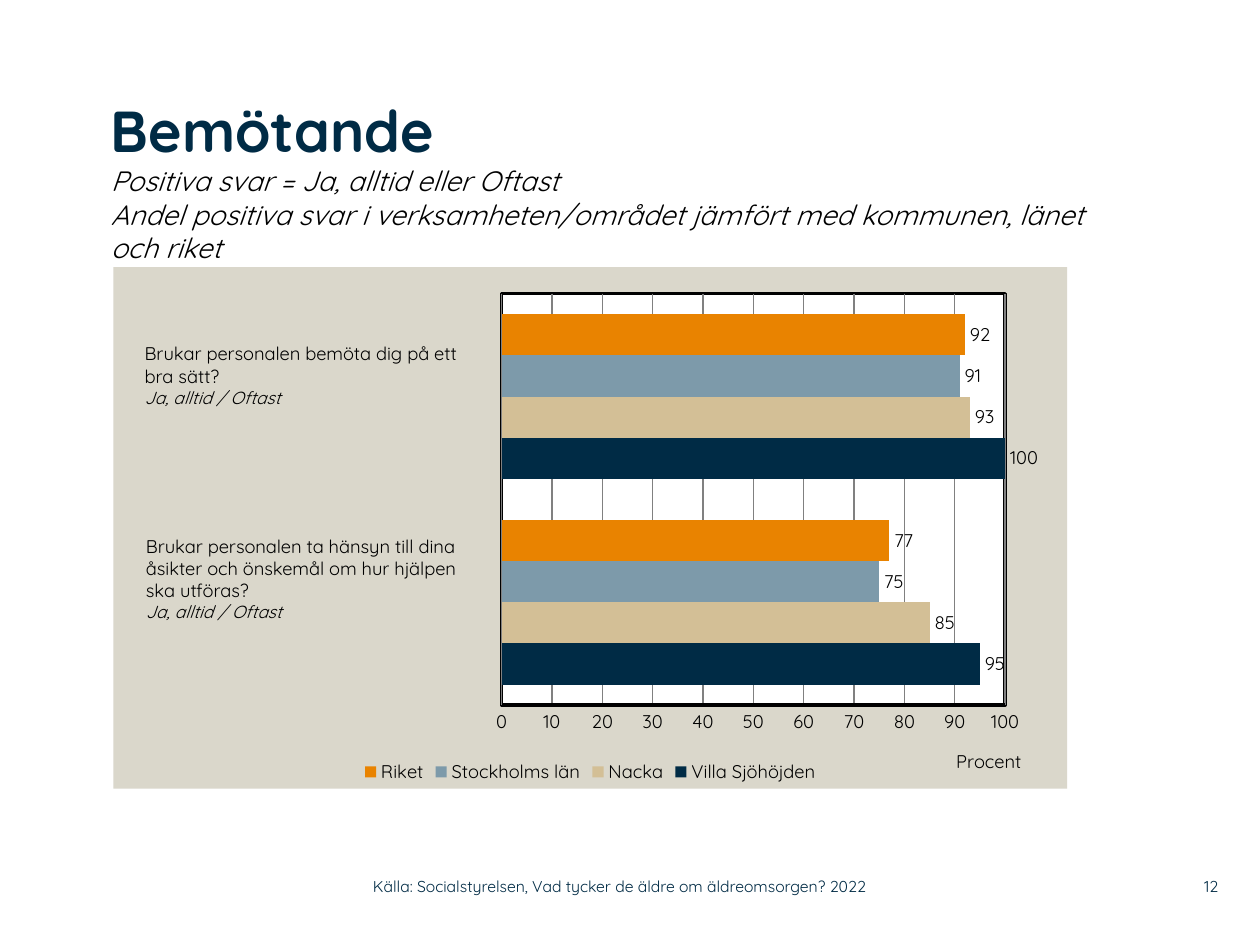
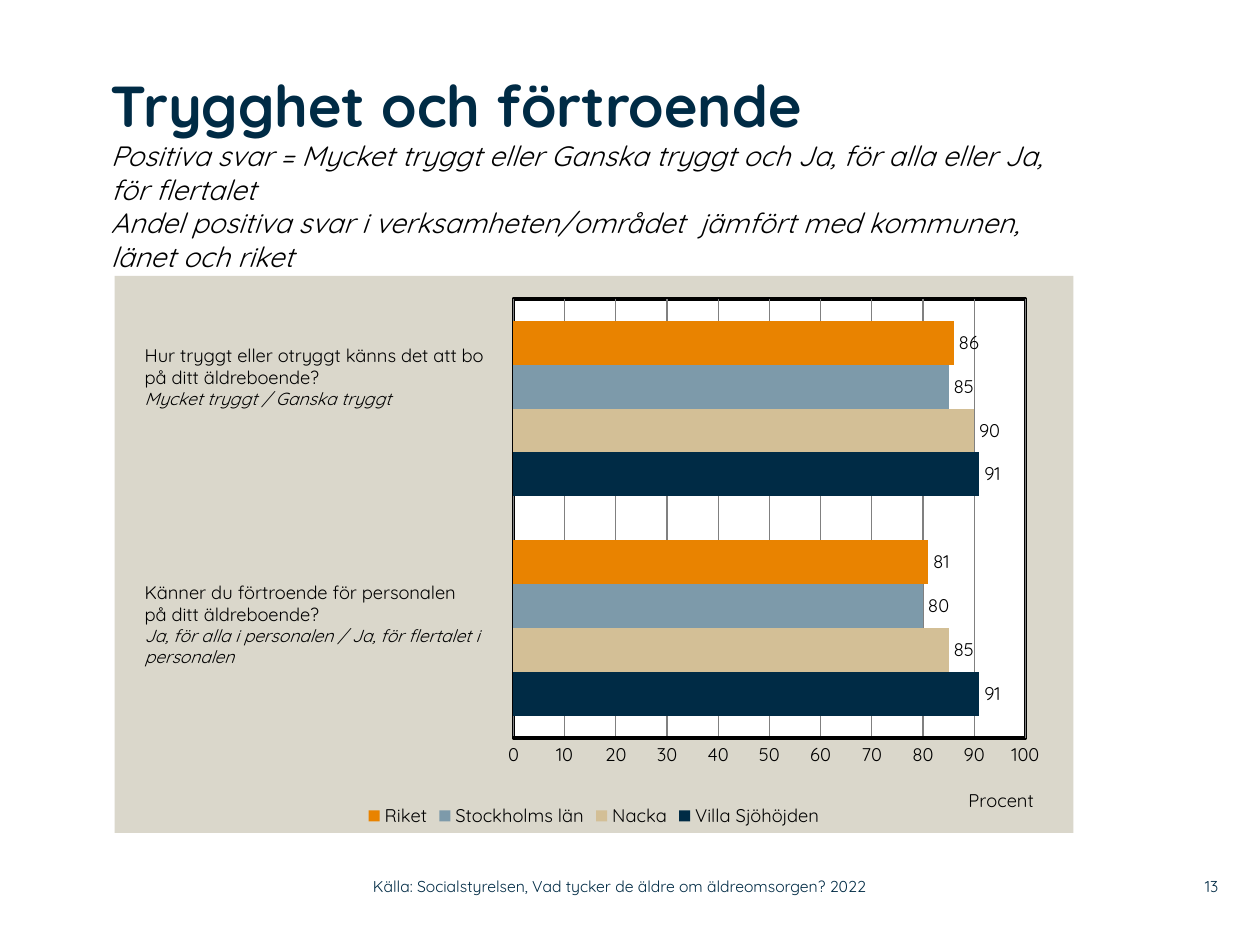
from pptx import Presentation
from pptx.chart.data import CategoryChartData
from pptx.dml.color import RGBColor
from pptx.enum.chart import XL_CHART_TYPE as CT, XL_LABEL_POSITION as LP
from pptx.enum.chart import XL_LEGEND_POSITION as LEG, XL_TICK_MARK as TICK
from pptx.enum.text import MSO_ANCHOR, MSO_AUTO_SIZE, PP_ALIGN
from pptx.oxml import parse_xml
from pptx.oxml.ns import nsdecls, qn
from pptx.util import Emu, Pt

SCALE = 9144  # EMU per px, 100 px to the inch
FONT = "Quicksand"
NAVY, BLACK, WHITE, BEIGE, GREY = "002B45", "000000", "FFFFFF", "DAD7CB", "808080"
SERIES = [("Villa Sjöhöjden", NAVY), ("Nacka", "D3BF96"),
          ("Stockholms län", "7D9AAA"), ("Riket", "E98300")]

TITLE = dict(size=33, color=NAVY, bold=True)
SUBTITLE = dict(size=16, color=BLACK, bold=False, italic=True)
QUESTION = dict(size=10.5, color=BLACK)
ANSWER = dict(size=10, color=BLACK, italic=True)
FOOTER = dict(size=9, color=NAVY)
CHART_TEXT = dict(size=10.5, color=BLACK, bold=False)


def px(n):
    return Emu(n * SCALE)


def rgb(color):
    return RGBColor.from_string(color)


def style(font, size, color, **attrs):
    font.size, font.color.rgb = Pt(size), rgb(color)
    for name, value in dict(name=FONT, **attrs).items():
        setattr(font, name, value)


def add_run(p, text, fmt):
    r = p.add_run()
    r.text = text
    style(r.font, **fmt)


def prepare_frame(tf, margins=None, anchor=MSO_ANCHOR.TOP):
    tf.word_wrap, tf.auto_size, tf.vertical_anchor = True, MSO_AUTO_SIZE.NONE, anchor
    if margins is not None:
        for side in ("left", "top", "right", "bottom"):
            setattr(tf, f"margin_{side}", px(margins))


def place_title(s, box, heading, lines):
    sp = s.shapes.title
    sp.left, sp.top, sp.width, sp.height = map(px, box)
    prepare_frame(sp.text_frame, margins=0)
    p = sp.text_frame.paragraphs[0]
    p.alignment = PP_ALIGN.LEFT
    add_run(p, heading, TITLE)
    for line in lines:
        p.add_line_break()
        add_run(p, line, SUBTITLE)


def add_text(s, box, paragraphs, align=PP_ALIGN.LEFT, **frame):
    tf = s.shapes.add_textbox(*map(px, box)).text_frame
    prepare_frame(tf, **frame)
    for i, (text, fmt) in enumerate(paragraphs):
        p = tf.add_paragraph() if i else tf.paragraphs[0]
        p.alignment = align
        add_run(p, text, fmt)


def add_question(s, box, lines, answer):
    add_text(s, box, [(line, QUESTION) for line in lines] + [(answer, ANSWER)])


def add_footer(s, number):
    frame = dict(margins=0, anchor=MSO_ANCHOR.MIDDLE)
    source = "Källa: Socialstyrelsen, Vad tycker de äldre om äldreomsorgen? 2022"
    add_text(s, (296, 689, 443, 29), [(source, FOOTER)], **frame)
    add_text(s, (920, 689, 47, 29), [(str(number), FOOTER)], PP_ALIGN.RIGHT, **frame)


def set_layout(parent, index, target=None, **fractions):
    """Give a chart part a manual layout in fractions of the chart."""
    for old in parent.findall(qn("c:layout")):
        parent.remove(old)
    modes = {"layoutTarget": target} if target else {}
    modes |= {"xMode": "edge", "yMode": "edge"}
    items = "".join(f'<c:{k} val="{v}"/>' for k, v in (modes | fractions).items())
    parent.insert(index, parse_xml(
        f'<c:layout {nsdecls("c")}><c:manualLayout>{items}</c:manualLayout></c:layout>'))


def area_format(fill, line=None, width=0):
    paint = f'<a:solidFill><a:srgbClr val="{line}"/></a:solidFill>' if line else "<a:noFill/>"
    return parse_xml(
        f'<c:spPr {nsdecls("c", "a")}><a:solidFill><a:srgbClr val="{fill}"/></a:solidFill>'
        f'<a:ln w="{Pt(width)}">{paint}</a:ln></c:spPr>')


def add_bar_chart(s, box, values, plot_box, unit_at):
    data = CategoryChartData()
    data.categories = ["1", "2"]
    for (name, _), vals in zip(SERIES, values):
        data.add_series(name, vals)
    chart = s.shapes.add_chart(CT.BAR_CLUSTERED, *map(px, box), data).chart
    style(chart.font, **CHART_TEXT)
    chart.has_title = False

    # Legend
    chart.has_legend = True
    chart.legend.position, chart.legend.include_in_layout = LEG.BOTTOM, False
    style(chart.legend.font, **CHART_TEXT)

    # Axes
    chart.category_axis.visible = False
    axis = chart.value_axis
    for name, value in dict(minimum_scale=0, maximum_scale=100, major_unit=10,
                            major_tick_mark=TICK.NONE, minor_tick_mark=TICK.NONE,
                            has_major_gridlines=True, has_title=True).items():
        setattr(axis, name, value)
    style(axis.tick_labels.font, **CHART_TEXT)
    for line, color, width in ((axis.format.line, BLACK, 2),
                               (axis.major_gridlines.format.line, GREY, 0.75)):
        line.color.rgb, line.width = rgb(color), Pt(width)
    title = axis.axis_title
    add_run(title.text_frame.paragraphs[0], "Procent", CHART_TEXT)
    set_layout(title.format.element if hasattr(title.format, "element")
               else title.element, 1, x=unit_at[0], y=unit_at[1])

    # Bars and their labels
    plot = chart.plots[0]
    plot.gap_width, plot.overlap, plot.vary_by_categories = 100, 0, False
    for series, (_, color) in zip(plot.series, SERIES):
        series.format.fill.solid()
        series.format.fill.fore_color.rgb = rgb(color)
        labels = series.data_labels
        labels.show_value, labels.position = True, LP.OUTSIDE_END
        style(labels.font, **CHART_TEXT)

    # Chart and plot backgrounds
    root = chart.element.find(qn("c:chart"))
    root.addnext(area_format(BEIGE))
    area = root.find(qn("c:plotArea"))
    set_layout(area, 0, "inner", **dict(zip("xywh", plot_box)))
    area.append(area_format(WHITE, BLACK, 2))


def add_result_slide(prs, number, title, chart, questions):
    s = prs.slides.add_slide(prs.slide_layouts[5])
    place_title(s, **title)
    add_bar_chart(s, **chart)
    for question in questions:
        add_question(s, *question)
    add_footer(s, number)


def main():
    prs = Presentation()
    prs.slide_width, prs.slide_height = px(1000), px(750)

    add_result_slide(
        prs, 12,
        title=dict(box=(88, 75, 804, 120), heading="Bemötande", lines=[
            "Positiva svar = Ja, alltid eller Oftast",
            "Andel positiva svar i verksamheten/området jämfört med kommunen, länet och riket"]),
        chart=dict(box=(90, 212, 757, 414), plot_box=(0.407, 0.051, 0.528, 0.789),
                   unit_at=(0.88, 0.915),
                   values=[(95, 100), (85, 93), (75, 91), (77, 92)]),
        questions=[
            ((105, 267, 297, 81),
             ["Brukar personalen bemöta dig på ett", "bra sätt?"], "Ja, alltid / Oftast"),
            ((106, 420, 301, 98),
             ["Brukar personalen ta hänsyn till dina", "åsikter och önskemål om hur hjälpen",
              "ska utföras?"], "Ja, alltid / Oftast")])

    add_result_slide(
        prs, 13,
        title=dict(box=(88, 55, 775, 164), heading="Trygghet och förtroende", lines=[
            "Positiva svar = Mycket tryggt eller Ganska tryggt och Ja, för alla eller Ja, "
            "för flertalet",
            "Andel positiva svar i verksamheten/området  jämfört med kommunen, länet och riket"]),
        chart=dict(box=(91, 219, 761, 442), plot_box=(0.416, 0.041, 0.534, 0.789),
                   unit_at=(0.887, 0.912),
                   values=[(91, 91), (85, 90), (80, 85), (81, 86)]),
        questions=[
            ((105, 268, 298, 81),
             ["Hur tryggt eller otryggt känns det att bo på ditt äldreboende?"],
             "Mycket tryggt / Ganska tryggt"),
            ((105, 456, 300, 98),
             ["Känner du förtroende för personalen", "på ditt äldreboende?"],
             "Ja, för alla i personalen / Ja, för flertalet i personalen")])

    prs.save("out.pptx")


if __name__ == "__main__":
    main()
